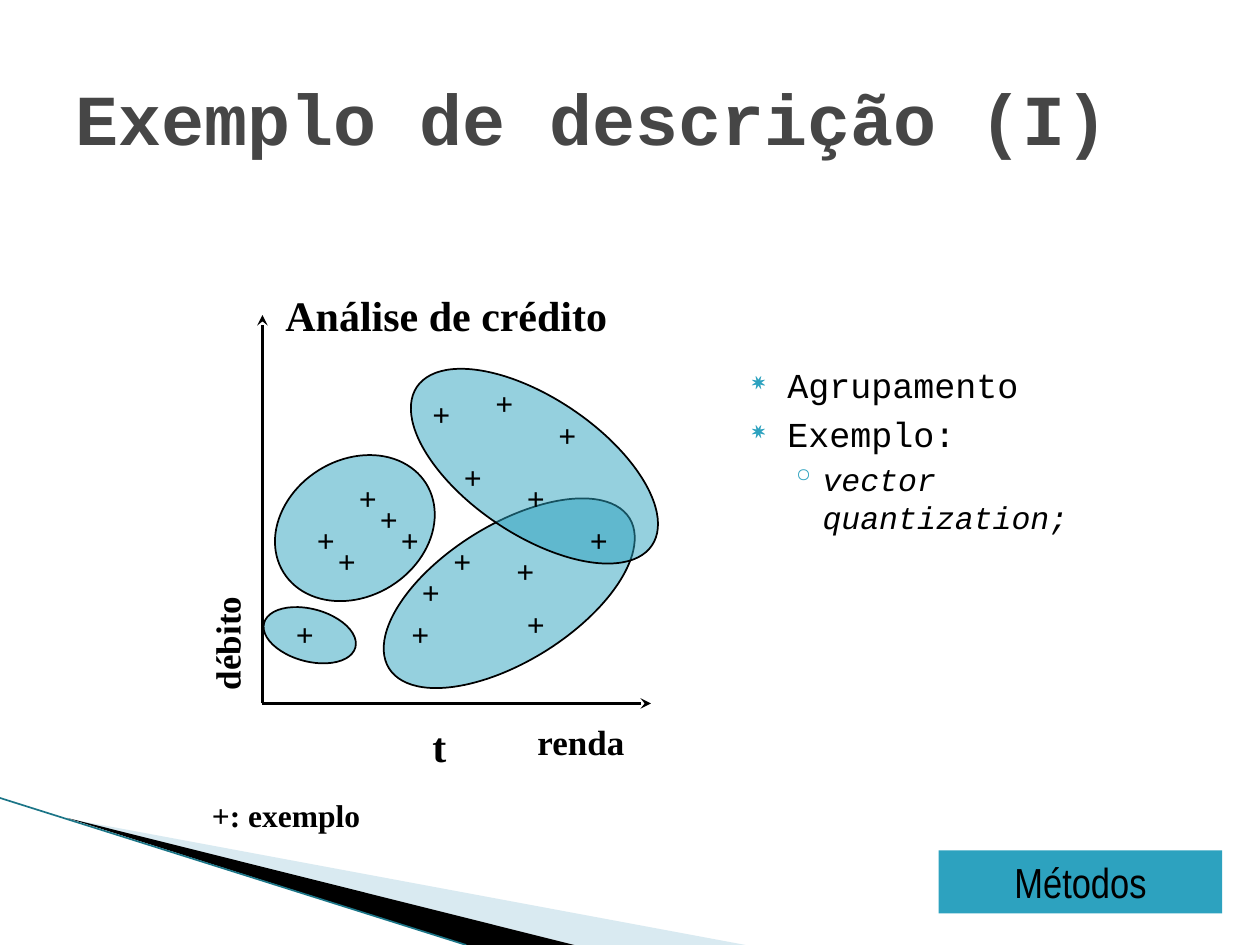
from lxml.etree import SubElement
from pptx import Presentation
from pptx.dml.color import RGBColor
from pptx.enum.shapes import MSO_CONNECTOR, MSO_SHAPE
from pptx.enum.text import MSO_ANCHOR, PP_ALIGN
from pptx.oxml.ns import qn
from pptx.util import Inches, Pt

COLORS = {"black": "000000", "title": "464646", "accent": "2DA2BF",
          "pale": "A0CBDC", "edge": "1B7587"}
SERIF, MONO, NARROW = "Times New Roman", "Courier New", "Arial Narrow"
COLUMNS, ROWS = 120, 90

# Clusters: left, top, width, height in grid cells, then rotation
CLUSTERS = [(25, 58, 9, 5, 15), (25.8, 43.8, 16, 13, 328),
            (35, 50, 27, 13, 328), (37.4, 37.9, 27, 13, 34)]
# Left and top cell of each "+" mark
EXAMPLES = [(33, 45), (35, 47), (31, 51), (29, 49), (49, 45), (40, 37),
            (27, 58), (37, 49), (46, 36), (52, 39), (48, 52), (55, 49),
            (38, 58), (43, 43), (42, 51), (49, 57), (39, 54)]
# Text, left, top, width, height, size, rotation
LABELS = [("renda", 50, 68, 12, 5.2, 20, 0),
          ("débito", 15.6, 58.3, 12, 5.2, 20, 270),
          ("t", 40, 68, 3, 6, 24, 0),
          ("+: exemplo", 19, 75.2, 32, 4.8, 18, 0),
          ("Análise de crédito", 26, 27, 35, 6, 24, 0)]
# Text, level
BULLETS = [("Agrupamento", 0), ("Exemplo:", 0), ("vector quantization;", 1)]
# Character, size in points, space before, left margin, hang, bullet percentage
LEVELS = [("✷", 20, 4, 0.4, 0.28, 68), ("◦", 18, 3.2, 0.68, 0.25, 100)]


class SlideBuilder:
    """Places styled elements on a grid of COLUMNS by ROWS cells."""

    def __init__(self, presentation):
        self.cell_width = presentation.slide_width / COLUMNS
        self.cell_height = presentation.slide_height / ROWS
        self.slide = presentation.slides.add_slide(presentation.slide_layouts[5])
        self.shapes = self.slide.shapes

    def point(self, column, row):
        return round(column * self.cell_width), round(row * self.cell_height)

    def box(self, left, top, width, height):
        return *self.point(left, top), *self.point(width, height)

    def format_runs(self, paragraph, size, font, color="black", bold=False, italic=False):
        for run in paragraph.runs:
            run.font.size = Pt(size)
            run.font.name = font
            run.font.bold = bold
            run.font.italic = italic
            run.font.color.rgb = RGBColor.from_string(COLORS[color])

    def fill(self, shape, color, opacity=100):
        shape.shadow.inherit = False
        shape.fill.solid()
        shape.fill.fore_color.rgb = RGBColor.from_string(COLORS[color])
        if opacity < 100:
            color_element = shape.fill._xPr.find(qn("a:solidFill"))[0]
            SubElement(color_element, qn("a:alpha"), val=str(opacity * 1000))

    def title(self, text, *cells):
        title = self.shapes.title
        title.left, title.top, title.width, title.height = self.box(*cells)
        frame = title.text_frame
        frame.text = text
        frame.vertical_anchor = MSO_ANCHOR.MIDDLE
        frame.paragraphs[0].alignment = PP_ALIGN.LEFT
        self.format_runs(frame.paragraphs[0], 41, MONO, "title", bold=True)

    def label(self, text, left, top, width, height, size=18, rotation=0):
        label = self.shapes.add_textbox(*self.box(left, top, width, height))
        label.rotation = rotation
        label.text_frame.word_wrap = True
        label.text_frame.text = text
        self.format_runs(label.text_frame.paragraphs[0], size, SERIF, bold=True)

    def bullets(self, items, *cells):
        frame = self.shapes.add_textbox(*self.box(*cells)).text_frame
        frame.word_wrap = True
        for index, (text, level) in enumerate(items):
            character, size, space, margin, hang, percentage = LEVELS[level]
            paragraph = frame.add_paragraph() if index else frame.paragraphs[0]
            paragraph.text = text
            paragraph.level = level
            if index:
                paragraph.space_before = Pt(space)
            properties = paragraph._p.get_or_add_pPr()
            properties.set("marL", str(Inches(margin)))
            properties.set("indent", str(-Inches(hang)))
            bullet_color = SubElement(properties, qn("a:buClr"))
            SubElement(bullet_color, qn("a:srgbClr"), val=COLORS["accent"])
            SubElement(properties, qn("a:buSzPct"), val=str(percentage * 1000))
            SubElement(properties, qn("a:buChar"), char=character)
            self.format_runs(paragraph, size, MONO, italic=level == 1)

    def cluster(self, left, top, width, height, rotation):
        ellipse = self.shapes.add_shape(MSO_SHAPE.OVAL, *self.box(left, top, width, height))
        ellipse.rotation = rotation
        self.fill(ellipse, "accent", opacity=50)
        ellipse.line.color.rgb = RGBColor.from_string(COLORS["black"])
        ellipse.line.width = Pt(1)

    def line(self, start, end, color="black", width=2, arrow=False):
        line = self.shapes.add_connector(
            MSO_CONNECTOR.STRAIGHT, *self.point(*start), *self.point(*end))
        line.line.color.rgb = RGBColor.from_string(COLORS[color])
        line.line.width = Pt(width)
        if arrow:
            SubElement(line.line._get_or_add_ln(), qn("a:tailEnd"), type="stealth")
        SubElement(line._element.spPr, qn("a:effectLst"))

    def wedge(self, points, color, opacity=100):
        start, *others = [self.point(*point) for point in points]
        builder = self.shapes.build_freeform(*start)
        builder.add_line_segments(others)
        wedge = builder.convert_to_shape()
        self.fill(wedge, color, opacity)
        wedge.line.fill.background()

    def button(self, text, *cells):
        button = self.shapes.add_shape(MSO_SHAPE.RECTANGLE, *self.box(*cells))
        self.fill(button, "accent")
        button.line.fill.background()
        frame = button.text_frame
        frame.word_wrap = False
        frame.vertical_anchor = MSO_ANCHOR.MIDDLE
        frame.text = text
        frame.paragraphs[0].alignment = PP_ALIGN.CENTER
        self.format_runs(frame.paragraphs[0], 24, NARROW)


def main():
    presentation = Presentation()
    presentation.slide_width, presentation.slide_height = Inches(10), Inches(7.5)
    builder = SlideBuilder(presentation)

    builder.wedge([(6.6, 78), (71, ROWS), (54.7, ROWS)], "pale", opacity=40)
    builder.wedge([(6.4, 77.9), (54.7, ROWS), (44.4, ROWS)], "black")
    builder.line((0, 76), (44.4, ROWS), "edge", width=0.95)

    builder.title("Exemplo de descrição (I)", 6, 3.6, 108, 15)
    builder.bullets(BULLETS, 69, 34, 45.6, 47.8)

    for cluster in CLUSTERS:
        builder.cluster(*cluster)
    origin = (25, 67)
    for axis_end in [(25, 30), (62, 67)]:
        builder.line(origin, axis_end, arrow=True)
    for left, top in EXAMPLES:
        builder.label("+", left, top, 4, 4.8)
    for label in LABELS:
        builder.label(*label)
    builder.button("Métodos", 89.4, 81, 27, 6)

    presentation.save("out.pptx")


if __name__ == "__main__":
    main()
